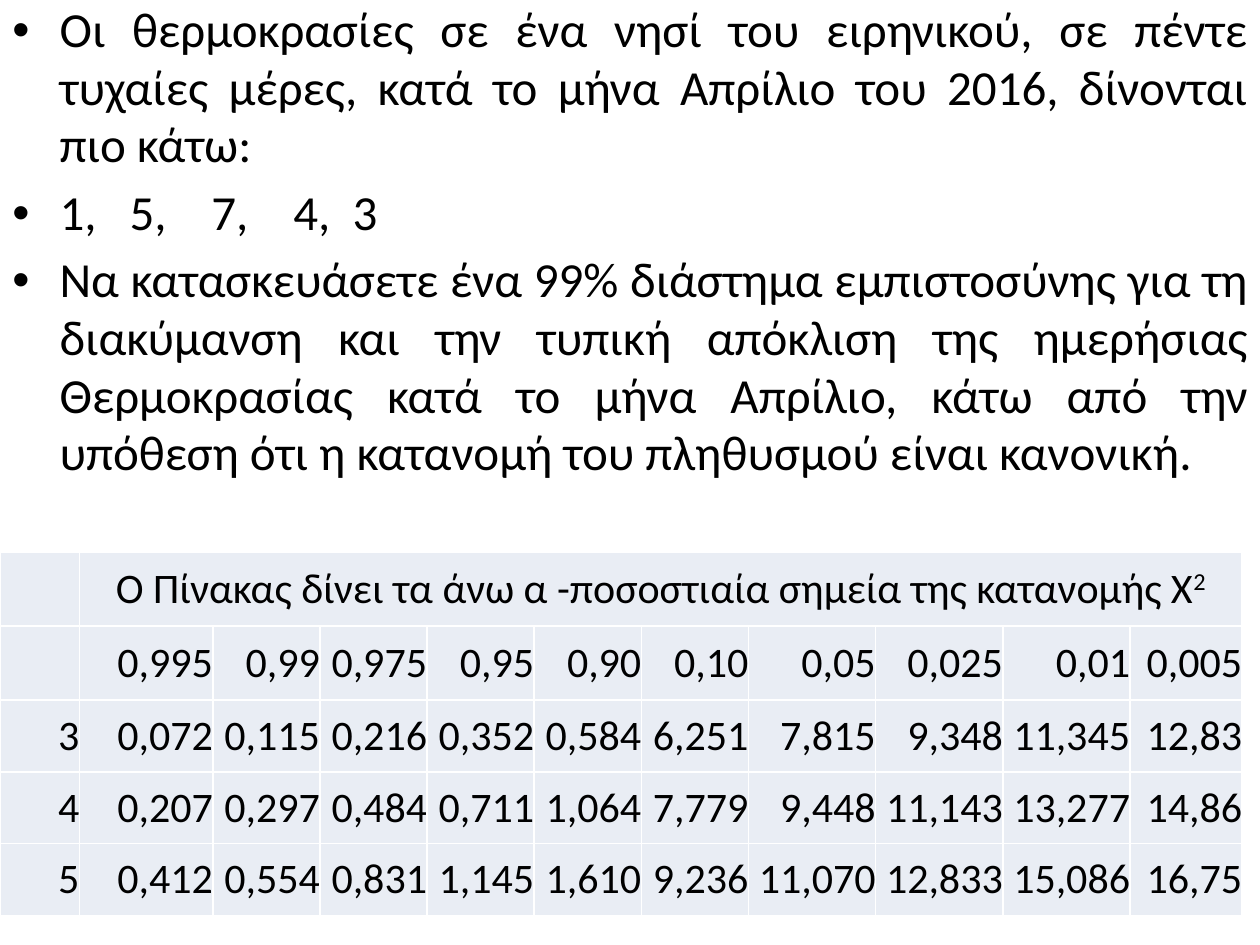
"""Build a slide with a confidence interval exercise and a chi-square table."""
from dataclasses import dataclass

from lxml import etree
from pptx import Presentation
from pptx.dml.color import RGBColor
from pptx.enum.text import MSO_ANCHOR, PP_ALIGN
from pptx.oxml.ns import qn
from pptx.util import Inches, Pt

JUSTIFY, CENTER, RIGHT = PP_ALIGN.JUSTIFY, PP_ALIGN.CENTER, PP_ALIGN.RIGHT
MIDDLE = MSO_ANCHOR.MIDDLE
FONT = "Calibri"
COLORS = {"text": "000000", "cell": "E9EDF4", "border": "FFFFFF"}
WIDTH, HEIGHT = Inches(10), Inches(7.5)
INDENT = 3.75
COLUMNS = [6.3, 10.6] + [8.5] * 5 + [10.1] * 3 + [8.9]
ROWS = [7.85] * 2 + [7.6] * 3
TITLE = "Ο Πίνακας δίνει τα άνω α -ποσοστιαία σημεία της κατανομής Χ"
VALUES = [
    ["", "0,995", "0,99", "0,975", "0,95", "0,90", "0,10", "0,05", "0,025", "0,01", "0,005"],
    ["3", "0,072", "0,115", "0,216", "0,352", "0,584", "6,251", "7,815", "9,348", "11,345", "12,83"],
    ["4", "0,207", "0,297", "0,484", "0,711", "1,064", "7,779", "9,448", "11,143", "13,277", "14,86"],
    ["5", "0,412", "0,554", "0,831", "1,145", "1,610", "9,236", "11,070", "12,833", "15,086", "16,75"],
]


@dataclass
class Bullet:
    """A bulleted paragraph with tab stops in percent of the slide width."""
    text: str
    tabs: tuple[float, ...] = ()


BULLETS = [
    Bullet("Οι θερμοκρασίες σε ένα νησί του ειρηνικού, σε πέντε τυχαίες μέρες, "
           "κατά το μήνα Απρίλιο του 2016, δίνονται πιο κάτω:"),
    Bullet("1,\t5,\t7,\t4,\t3", (9.3, 15.8, 22.3, 27)),
    Bullet("Να κατασκευάσετε ένα 99% διάστημα εμπιστοσύνης για τη διακύμανση και "
           "την τυπική απόκλιση της ημερήσιας Θερμοκρασίας κατά το μήνα Απρίλιο, "
           "κάτω από την υπόθεση ότι η κατανομή του πληθυσμού είναι κανονική."),
]


def across(percent: float) -> int:
    """Return a share of the slide width."""
    return int(WIDTH * percent / 100)


def down(percent: float) -> int:
    """Return a share of the slide height."""
    return int(HEIGHT * percent / 100)


def style_runs(p, size: float) -> None:
    """Give every run of a paragraph the slide font."""
    for r in p.runs:
        r.font.name = FONT
        r.font.size = Pt(size)
        r.font.color.rgb = RGBColor.from_string(COLORS["text"])


def write_bullet(p, bullet: Bullet) -> None:
    """Write one justified bullet with a hanging indent."""
    p.text = bullet.text
    p.alignment = JUSTIFY
    p.line_spacing = 0.98
    p.space_before = Pt(5.6)
    style_runs(p, 28)
    pPr = p._p.get_or_add_pPr()
    pPr.set("marL", str(across(INDENT)))
    pPr.set("indent", str(-across(INDENT)))
    etree.SubElement(pPr, qn("a:buFont"), typeface="Arial")
    etree.SubElement(pPr, qn("a:buChar"), char="•")
    if bullet.tabs:
        stops = etree.SubElement(pPr, qn("a:tabLst"))
        for tab in bullet.tabs:
            etree.SubElement(stops, qn("a:tab"), pos=str(across(tab)), algn="l")


def add_bullets(s, bullets: list[Bullet]) -> None:
    """Add the exercise text across the top of the slide."""
    sp = s.shapes.add_textbox(0, down(-0.5), WIDTH, down(56.8))
    tf = sp.text_frame
    tf.word_wrap = True
    for i, bullet in enumerate(bullets):
        write_bullet(tf.add_paragraph() if i else tf.paragraphs[0], bullet)


def style_cell(cell) -> None:
    """Set the margins, borders and fill of one cell."""
    cell.margin_left = cell.margin_right = cell.margin_top = cell.margin_bottom = 0
    cell.vertical_anchor = MIDDLE
    tcPr = cell._tc.get_or_add_tcPr()
    for side in ("L", "R", "T", "B"):
        ln = etree.SubElement(tcPr, qn(f"a:ln{side}"), w=str(Pt(1)))
        fill = etree.SubElement(ln, qn("a:solidFill"))
        etree.SubElement(fill, qn("a:srgbClr"), val=COLORS["border"])
    cell.fill.solid()
    cell.fill.fore_color.rgb = RGBColor.from_string(COLORS["cell"])


def write_cell(cell, text: str, align: PP_ALIGN):
    """Write the text of one cell and return its paragraph."""
    p = cell.text_frame.paragraphs[0]
    p.text = text
    p.alignment = align
    style_runs(p, 24)
    return p


def add_chi_table(s) -> None:
    """Add the table of chi-square percentage points."""
    frame = s.shapes.add_table(len(ROWS), len(COLUMNS), 0, down(58.4),
                               across(sum(COLUMNS)), down(sum(ROWS)))
    table = frame.table
    for column, share in zip(table.columns, COLUMNS):
        column.width = across(share)
    for row, share in zip(table.rows, ROWS):
        row.height = down(share)
    for cell in table.iter_cells():
        style_cell(cell)
    for i, values in enumerate(VALUES, start=1):
        for j, value in enumerate(values):
            write_cell(table.cell(i, j), value, RIGHT)
    title = table.cell(0, 1)
    title.merge(table.cell(0, len(COLUMNS) - 1))
    p = write_cell(title, TITLE, CENTER)
    r = p.add_run()
    r.text = "2"
    style_runs(p, 24)
    r.font._element.set("baseline", "30000")


def main() -> None:
    """Build and save the slide."""
    prs = Presentation()
    prs.slide_width, prs.slide_height = WIDTH, HEIGHT
    s = prs.slides.add_slide(prs.slide_layouts[6])
    add_bullets(s, BULLETS)
    add_chi_table(s)
    prs.save("out.pptx")


if __name__ == "__main__":
    main()
